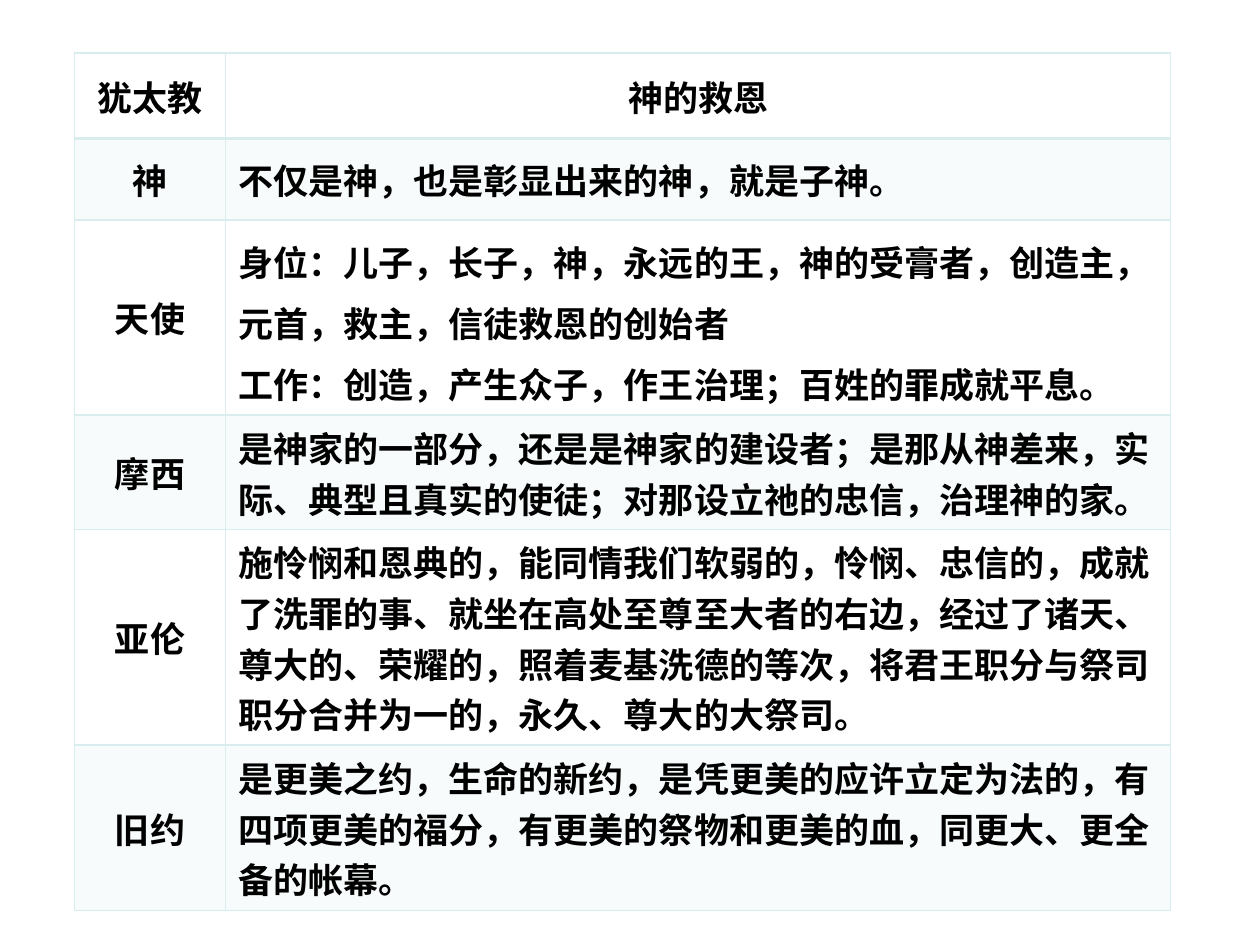
import pptx
import pptx.dml.color
import pptx.enum.text
import pptx.oxml
import pptx.oxml.ns
import pptx.util
from lxml import etree

Cm = pptx.util.Cm
Pt = pptx.util.Pt
ALIGN = pptx.enum.text.PP_ALIGN
qn = pptx.oxml.ns.qn

HEAD = ("犹太教", ["神的救恩"])
ROWS = [
    ("神", ["不仅是神，也是彰显出来的神，就是子神。"]),
    ("天使", [
        "身位：儿子，长子，神，永远的王，神的受膏者，创造主，元首，救主，信徒救恩的创始者",
        "工作：创造，产生众子，作王治理；百姓的罪成就平息。",
    ]),
    ("摩西", ["是神家的一部分，还是是神家的建设者；是那从神差来，实际、典型且真实的使徒；"
            "对那设立祂的忠信，治理神的家。"]),
    ("亚伦", ["施怜悯和恩典的，能同情我们软弱的，怜悯、忠信的，成就了洗罪的事、"
            "就坐在高处至尊至大者的右边，经过了诸天、尊大的、荣耀的，"
            "照着麦基洗德的等次，将君王职分与祭司职分合并为一的，永久、尊大的大祭司。"]),
    ("旧约", ["是更美之约，生命的新约，是凭更美的应许立定为法的，有四项更美的福分，"
            "有更美的祭物和更美的血，同更大、更全备的帐幕。"]),
]

THEME = {
    "ink": "000000", "tint": "D9EDEE", "alpha": 20, "size": 20,
    "latin": "Arial", "asian": "Noto Sans CJK SC", "line": 1, "rule": 2,
}
PAGE = (25.4, 19.05)
LEFT, TOP = 1.5, 1.07
WIDTHS = [3.05, 19.05]
HEIGHTS = [1.73, 1.63, 3.61, 2.24, 4.19, 3.23]


def write(cell, lines, align=ALIGN.LEFT, font=THEME["latin"], space=None):
    cell.vertical_anchor = pptx.enum.text.MSO_ANCHOR.MIDDLE
    frame = cell.text_frame
    frame.text = "\n".join(lines)
    for para in frame.paragraphs:
        para.alignment = align
        if space:
            para.line_spacing = space
        for run in para.runs:
            run.font.size = Pt(THEME["size"])
            run.font.bold = True
            run.font.color.rgb = pptx.dml.color.RGBColor.from_string(THEME["ink"])
            run.font.name = font
            asian = etree.SubElement(run.font._element, qn("a:ea"))
            asian.set("typeface", THEME["asian"])


def edge(cell, **widths):
    """Draw the cell's sides; widths in points override the thin line."""
    props = cell._tc.get_or_add_tcPr()
    for side in ("L", "R", "T", "B"):
        width = Pt(widths.get(side, THEME["line"]))
        line = etree.SubElement(props, qn("a:ln" + side), w=str(int(width)))
        fill = etree.SubElement(line, qn("a:solidFill"))
        etree.SubElement(fill, qn("a:srgbClr"), val=THEME["tint"])


def shade(cell, on):
    if not on:
        cell.fill.background()
        return
    cell.fill.solid()
    cell.fill.fore_color.rgb = pptx.dml.color.RGBColor.from_string(THEME["tint"])
    color = cell._tc.tcPr.find(qn("a:solidFill")).find(qn("a:srgbClr"))
    etree.SubElement(color, qn("a:alpha"), val=str(THEME["alpha"] * 1000))


def build(slide):
    data = [HEAD] + ROWS
    table = slide.shapes.add_table(
        len(data), len(WIDTHS), Cm(LEFT), Cm(TOP),
        Cm(sum(WIDTHS)), Cm(sum(HEIGHTS))).table
    table.horz_banding = False
    for col, width in zip(table.columns, WIDTHS):
        col.width = Cm(width)
    for row, height in zip(table.rows, HEIGHTS):
        row.height = Cm(height)
    for num, (name, lines) in enumerate(data):
        head = num == 0
        font = THEME["asian"] if head else THEME["latin"]
        label, body = table.cell(num, 0), table.cell(num, 1)
        write(label, [name], align=ALIGN.CENTER, font=font)
        write(body, lines, align=ALIGN.CENTER if head else ALIGN.LEFT,
              font=font, space=1.2 if len(lines) > 1 else None)
        for cell in (label, body):
            if head:
                edge(cell, B=THEME["rule"])
            elif num == 1:
                edge(cell, T=THEME["rule"])
            else:
                edge(cell)
            shade(cell, num % 2 == 1)


def main():
    deck = pptx.Presentation()
    deck.slide_width, deck.slide_height = map(Cm, PAGE)
    build(deck.slides.add_slide(deck.slide_layouts[6]))
    deck.save("out.pptx")


if __name__ == "__main__":
    main()
